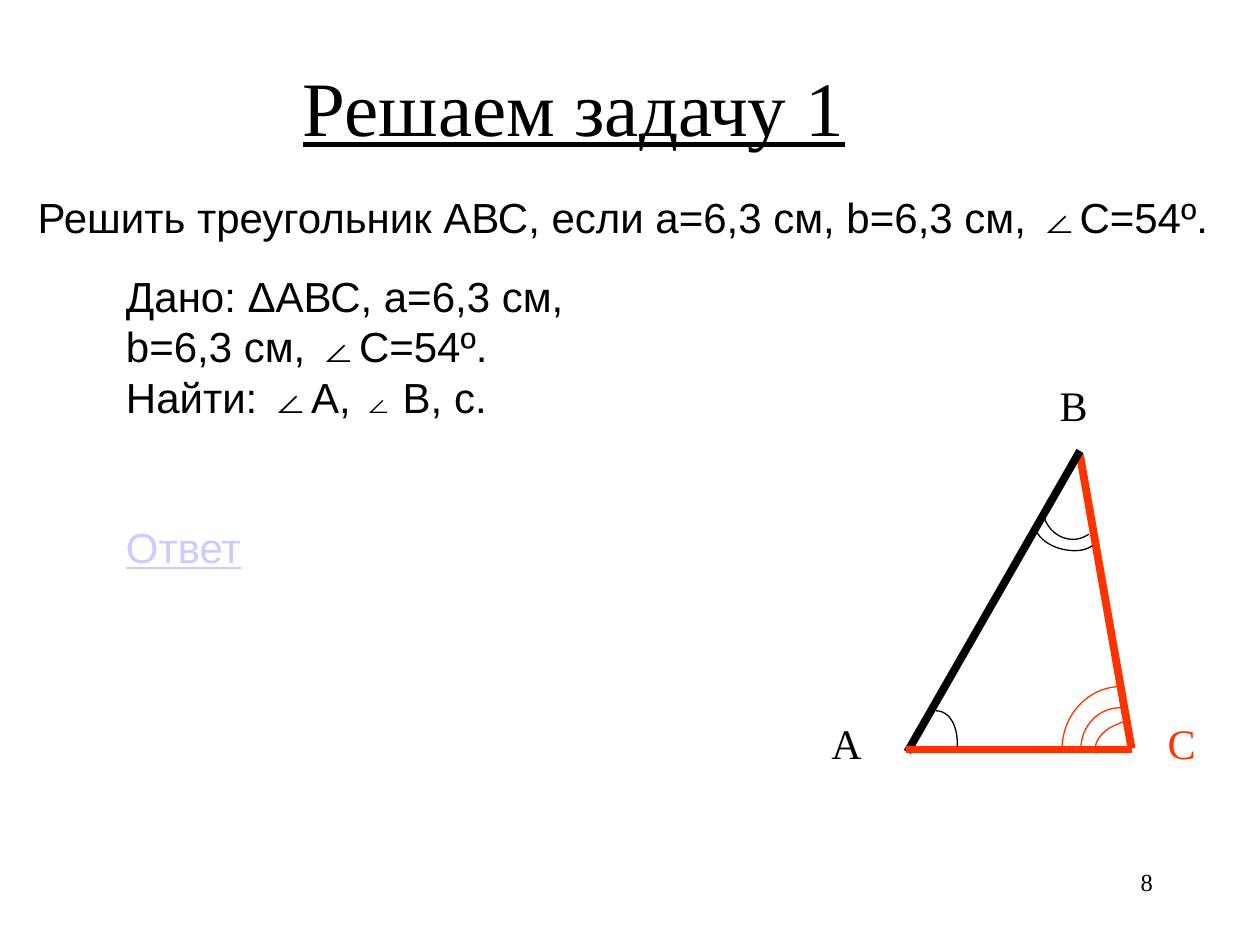
from lxml.etree import SubElement
from pptx import Presentation
from pptx.dml.color import RGBColor
from pptx.enum.text import MSO_ANCHOR, PP_ALIGN
from pptx.oxml.ns import qn
from pptx.util import Cm, Pt

BLACK = RGBColor(0x00, 0x00, 0x00)
RED = RGBColor(0xFF, 0x33, 0x00)
LAVENDER = RGBColor(0xCC, 0xCC, 0xFF)
SERIF, SANS = "Times New Roman", "Arial"

# All positions are in centimetres.
TITLE = "Решаем задачу 1"
PROBLEM = ["Решить треугольник АВС, если a=6,3 см, b=6,3 см, ∠C=54º."]
GIVEN = ["Дано: ΔАВС, a=6,3 см,", "b=6,3 см, ∠C=54º.", "Найти: ∠А, ", "Ответ"]
FIND_REST = [("∠ ", 18), ("В, c.", 24)]
PAGE_NUMBER = "8"

SIDES = [
    ((22.81, 15.09), (21.77, 9.17), RED),
    ((21.77, 9.09), (18.29, 15.16), BLACK),
    ((18.26, 15.11), (22.83, 15.11), RED),
]
VERTICES = [("С", 23.29, 14.33, RED), ("В", 21.11, 7.52, BLACK), ("А", 16.51, 14.33, BLACK)]

# Each angle mark is a chain of cubic curves: a start, then three points per curve.
ANGLE_MARKS = [
    (BLACK, [(21.95, 10.77), (21.87, 10.82), (21.78, 10.86), (21.69, 10.87),
             (21.41, 10.9), (21.16, 10.72), (21.06, 10.46)]),
    (BLACK, [(22.02, 11), (21.89, 11.1), (21.67, 11.13), (21.41, 11.07),
             (21.13, 11), (20.9, 10.82), (20.88, 10.64)]),
    (BLACK, [(19.3, 15.06), (19.3, 15.04), (19.3, 15.01), (19.3, 14.99),
             (19.3, 14.61), (19.13, 14.33), (18.87, 14.33)]),
    (RED, [(22.1, 15.19), (22.02, 14.99), (22.2, 14.73), (22.5, 14.61),
           (22.58, 14.58), (22.63, 14.55), (22.68, 14.55)]),
    (RED, [(22.63, 14.27), (22.58, 14.27), (22.56, 14.27), (22.53, 14.27),
           (22.1, 14.3), (21.77, 14.68), (21.79, 15.14)]),
    (RED, [(21.41, 15.14), (21.39, 14.48), (21.87, 13.89), (22.53, 13.84)]),
]
CURVE_STEPS = 12


def style(span, font, size, color):
    span.font.name, span.font.size = font, Pt(size)
    span.font.color.rgb = color


def add_text(page, place, lines, font, size=24, color=BLACK, align=PP_ALIGN.LEFT):
    box = page.shapes.add_textbox(*map(Cm, place))
    frame = box.text_frame
    frame.word_wrap = True
    frame.text = "\n".join(lines)
    for para in frame.paragraphs:
        para.alignment = align
        style(para.runs[0], font, size, color)
    return frame


def add_title(page):
    title = page.shapes.title
    title.left, title.top, title.width, title.height = map(Cm, (1.7, 0, 19.74, 3.18))
    frame = title.text_frame
    frame.text = TITLE
    frame.vertical_anchor = MSO_ANCHOR.BOTTOM
    para = frame.paragraphs[0]
    para.alignment = PP_ALIGN.CENTER
    style(para.runs[0], SERIF, 44, BLACK)
    para.runs[0].font.underline = True


def add_given(page):
    frame = add_text(page, (2.29, 5.33, 11.4, 6.35), GIVEN, SANS)
    find, answer = frame.paragraphs[2:]
    for text, size in FIND_REST:
        span = find.add_run()
        span.text = text
        style(span, SANS, size, BLACK)
    answer.space_before = Pt(57)
    answer.runs[0].font.color.rgb = LAVENDER
    answer.runs[0].font.underline = True


def add_side(page, start, end, color):
    side = page.shapes.add_connector(1, *map(Cm, start + end))
    side.line.color.rgb, side.line.width = color, Pt(4.5)
    SubElement(side._element.spPr, qn("a:effectLst"))


def curve_points(chain):
    """Return points along a chain of cubic curves, after its start."""
    points = []
    for first in range(0, len(chain) - 1, 3):
        controls = chain[first:first + 4]
        for step in range(1, CURVE_STEPS + 1):
            t = step / CURVE_STEPS
            weights = ((1 - t) ** 3, 3 * t * (1 - t) ** 2, 3 * t * t * (1 - t), t ** 3)
            points.append(tuple(
                Cm(sum(w * point[axis] for w, point in zip(weights, controls)))
                for axis in (0, 1)))
    return points


def add_angle_mark(page, color, chain):
    builder = page.shapes.build_freeform(*map(Cm, chain[0]))
    builder.add_line_segments(curve_points(chain), close=False)
    mark = builder.convert_to_shape()
    mark.shadow.inherit = False
    mark.fill.background()
    mark.line.color.rgb, mark.line.width = color, Pt(0.75)


def main():
    deck = Presentation()
    deck.slide_width, deck.slide_height = Cm(25.4), Cm(19.05)
    page = deck.slides.add_slide(deck.slide_layouts[5])
    add_title(page)
    add_text(page, (18.21, 17.35, 5.28, 1.27), [PAGE_NUMBER], SERIF, 14,
             align=PP_ALIGN.RIGHT)
    for start, end, color in SIDES:
        add_side(page, start, end, color)
    for name, left, top, color in VERTICES:
        add_text(page, (left, top, 1.27, 1.27), [name], SERIF, color=color)
    for color, chain in ANGLE_MARKS:
        add_angle_mark(page, color, chain)
    add_text(page, (0.51, 3.73, 24.51, 1.27), PROBLEM, SANS)
    add_given(page)
    deck.save("out.pptx")


if __name__ == "__main__":
    main()
